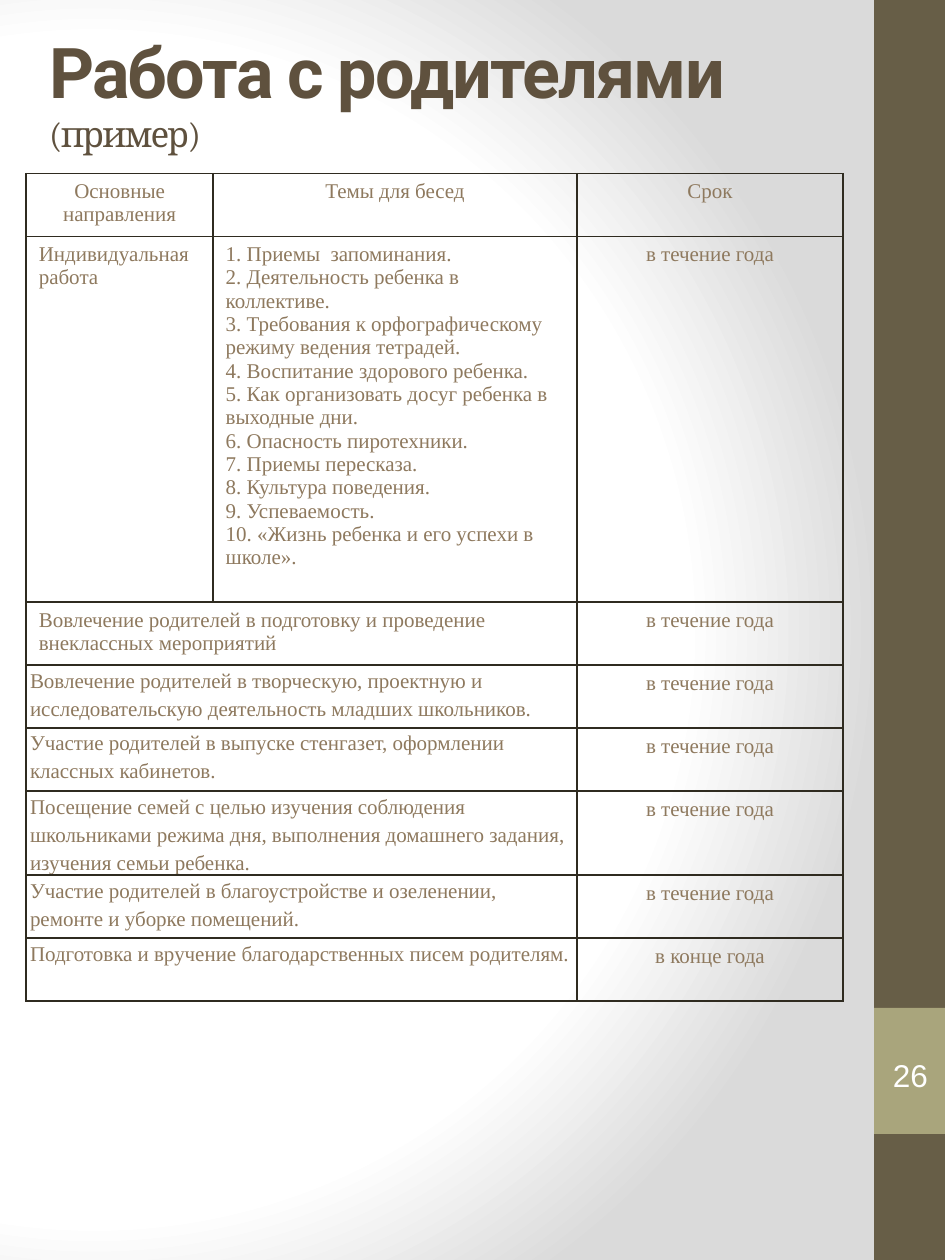
import pptx
import pptx.util
import pptx.dml.color
import pptx.enum.shapes
import pptx.enum.text
import pptx.oxml
import pptx.oxml.ns

Pt = pptx.util.Pt
RGB = pptx.dml.color.RGBColor
SHAPES = pptx.enum.shapes.MSO_SHAPE
ALIGN = pptx.enum.text.PP_ALIGN
MIDDLE = pptx.enum.text.MSO_ANCHOR.MIDDLE

OLIVE = RGB(0x67, 0x5E, 0x47)
SAGE = RGB(0xA9, 0xA5, 0x7C)
BROWN = RGB(0x5F, 0x51, 0x3E)
TAN = RGB(0x8E, 0x79, 0x5E)
DARK = RGB(0x2F, 0x2B, 0x20)
WHITE = RGB(0xFF, 0xFF, 0xFF)
GREY = RGB(0xDA, 0xDA, 0xDA)

SLIDE_WIDTH, SLIDE_HEIGHT = 540, 720
BAND_LEFT = 499.5
BACKGROUND_STOPS = [(0, WHITE), (75, WHITE), (100, GREY)]
TITLE_PARTS = [
    ("Работа с родителями ", 40, "Roboto", True),
    ("(пример)", 20, "Cambria", False),
]
PAGE_NUMBER = "26"

HEADINGS = ["Основные направления", "Темы для бесед", "Срок"]
INDIVIDUAL_WORK = "Индивидуальная работа"
TALK_TOPICS = [
    "Приемы  запоминания.",
    "Деятельность ребенка в коллективе.",
    "Требования к орфографическому режиму ведения тетрадей.",
    "Воспитание здорового ребенка.",
    "Как организовать досуг ребенка в выходные дни.",
    "Опасность пиротехники.",
    "Приемы пересказа.",
    "Культура поведения.",
    "Успеваемость.",
    "«Жизнь ребенка и его успехи в школе».",
]
ALL_YEAR = "в течение года"
YEAR_END = "в конце года"
ACTIVITIES = [
    ("Вовлечение родителей в подготовку и проведение внеклассных мероприятий", ALL_YEAR, None),
    ("Вовлечение родителей в творческую, проектную и исследовательскую деятельность "
     "младших школьников.", ALL_YEAR, 16.1),
    ("Участие родителей в выпуске стенгазет, оформлении классных кабинетов.", ALL_YEAR, 15.6),
    ("Посещение семей с целью изучения соблюдения школьниками режима дня, выполнения "
     "домашнего задания, изучения семьи ребенка.", ALL_YEAR, 15.9),
    ("Участие родителей в благоустройстве и озеленении, ремонте и уборке помещений.",
     ALL_YEAR, 15.9),
    ("Подготовка и вручение благодарственных писем родителям.", YEAR_END, 16.1),
]
COLUMN_WIDTHS = [106.8, 208, 152]
ROW_HEIGHTS = [36, 208.8, 36, 36, 36, 48, 36, 36]


def style_run(run, size, font, color, bold=False):
    run.font.size = Pt(size)
    run.font.name = font
    run.font.color.rgb = color
    run.font.bold = bold


def set_margins(holder, side, end):
    holder.margin_left = holder.margin_right = Pt(side)
    holder.margin_top = holder.margin_bottom = Pt(end)


def paint_background(slide):
    slide.background.fill.gradient()
    gradient = slide.element.find(".//" + pptx.oxml.ns.qn("a:gradFill"))
    stops = "".join(
        f'<a:gs pos="{position * 1000}"><a:srgbClr val="{color}"/></a:gs>'
        for position, color in BACKGROUND_STOPS
    )
    radial = pptx.oxml.parse_xml(
        f'<a:gradFill {pptx.oxml.ns.nsdecls("a")} rotWithShape="1"><a:gsLst>{stops}</a:gsLst>'
        '<a:path path="circle"><a:fillToRect l="20000" t="50000" r="100000" b="50000"/>'
        '</a:path></a:gradFill>'
    )
    gradient.getparent().replace(gradient, radial)


def add_band(slide, top, height, color):
    band = slide.shapes.add_shape(
        SHAPES.RECTANGLE, Pt(BAND_LEFT), Pt(top), Pt(SLIDE_WIDTH - BAND_LEFT), Pt(height))
    band.shadow.inherit = False
    band.fill.solid()
    band.fill.fore_color.rgb = color
    band.line.fill.background()


def add_title(slide):
    frame = slide.shapes.add_textbox(Pt(21), Pt(1.5), Pt(459), Pt(101.5)).text_frame
    frame.word_wrap = True
    frame.vertical_anchor = MIDDLE
    for text, size, font, bold in TITLE_PARTS:
        run = frame.paragraphs[0].add_run()
        run.text = text
        style_run(run, size, font, BROWN, bold)
        run.font._element.set("spc", "-100")


def add_page_number(slide):
    number = slide.shapes.add_shape(SHAPES.DOUBLE_BRACKET, Pt(504), Pt(593.5), Pt(32.4), Pt(41.8))
    number.shadow.inherit = False
    number.fill.background()
    number.line.fill.background()
    frame = number.text_frame
    set_margins(frame, 0, 0)
    frame.vertical_anchor = MIDDLE
    frame.text = PAGE_NUMBER
    frame.paragraphs[0].alignment = ALIGN.CENTER
    style_run(frame.paragraphs[0].runs[0], 18, "Arial", WHITE)


def frame_cell(cell):
    cell.fill.background()
    properties = cell._tc.get_or_add_tcPr()
    for index, edge in enumerate(("lnL", "lnR", "lnT", "lnB")):
        properties.insert(index, pptx.oxml.parse_xml(
            f'<a:{edge} {pptx.oxml.ns.nsdecls("a")} w="12700"><a:solidFill>'
            f'<a:srgbClr val="{DARK}"/></a:solidFill></a:{edge}>'))


def fill_cell(cell, text, alignment=ALIGN.LEFT, spacing=None):
    set_margins(cell, *((2.16, 0) if spacing else (7.2, 3.6)))
    cell.text_frame.text = text
    for paragraph in cell.text_frame.paragraphs:
        paragraph.alignment = alignment
        if spacing:
            paragraph.line_spacing = Pt(spacing)
        style_run(paragraph.runs[0], 12, "Times New Roman", TAN)


def add_plan(slide):
    plan = slide.shapes.add_table(
        len(ROW_HEIGHTS), len(COLUMN_WIDTHS), Pt(15), Pt(99.2),
        Pt(sum(COLUMN_WIDTHS)), Pt(sum(ROW_HEIGHTS))).table
    plan.first_row = plan.horz_banding = False
    for column, width in zip(plan.columns, COLUMN_WIDTHS):
        column.width = Pt(width)
    for row, height in zip(plan.rows, ROW_HEIGHTS):
        row.height = Pt(height)
    for cell in plan.iter_cells():
        frame_cell(cell)

    for column, heading in enumerate(HEADINGS):
        fill_cell(plan.cell(0, column), heading, ALIGN.CENTER)
    topics = "\n".join(f"{number}. {topic}" for number, topic in enumerate(TALK_TOPICS, 1))
    fill_cell(plan.cell(1, 0), INDIVIDUAL_WORK)
    fill_cell(plan.cell(1, 1), topics)
    fill_cell(plan.cell(1, 2), ALL_YEAR, ALIGN.CENTER)
    for row, (activity, term, spacing) in enumerate(ACTIVITIES, 2):
        plan.cell(row, 0).merge(plan.cell(row, 1))
        fill_cell(plan.cell(row, 0), activity, spacing=spacing)
        fill_cell(plan.cell(row, 2), term, ALIGN.CENTER)


def main():
    deck = pptx.Presentation()
    deck.slide_width, deck.slide_height = Pt(SLIDE_WIDTH), Pt(SLIDE_HEIGHT)
    slide = deck.slides.add_slide(deck.slide_layouts[6])
    paint_background(slide)
    add_band(slide, 0, SLIDE_HEIGHT, OLIVE)
    add_band(slide, 576, 72, SAGE)
    add_title(slide)
    add_plan(slide)
    add_page_number(slide)
    deck.save("out.pptx")


if __name__ == "__main__":
    main()
